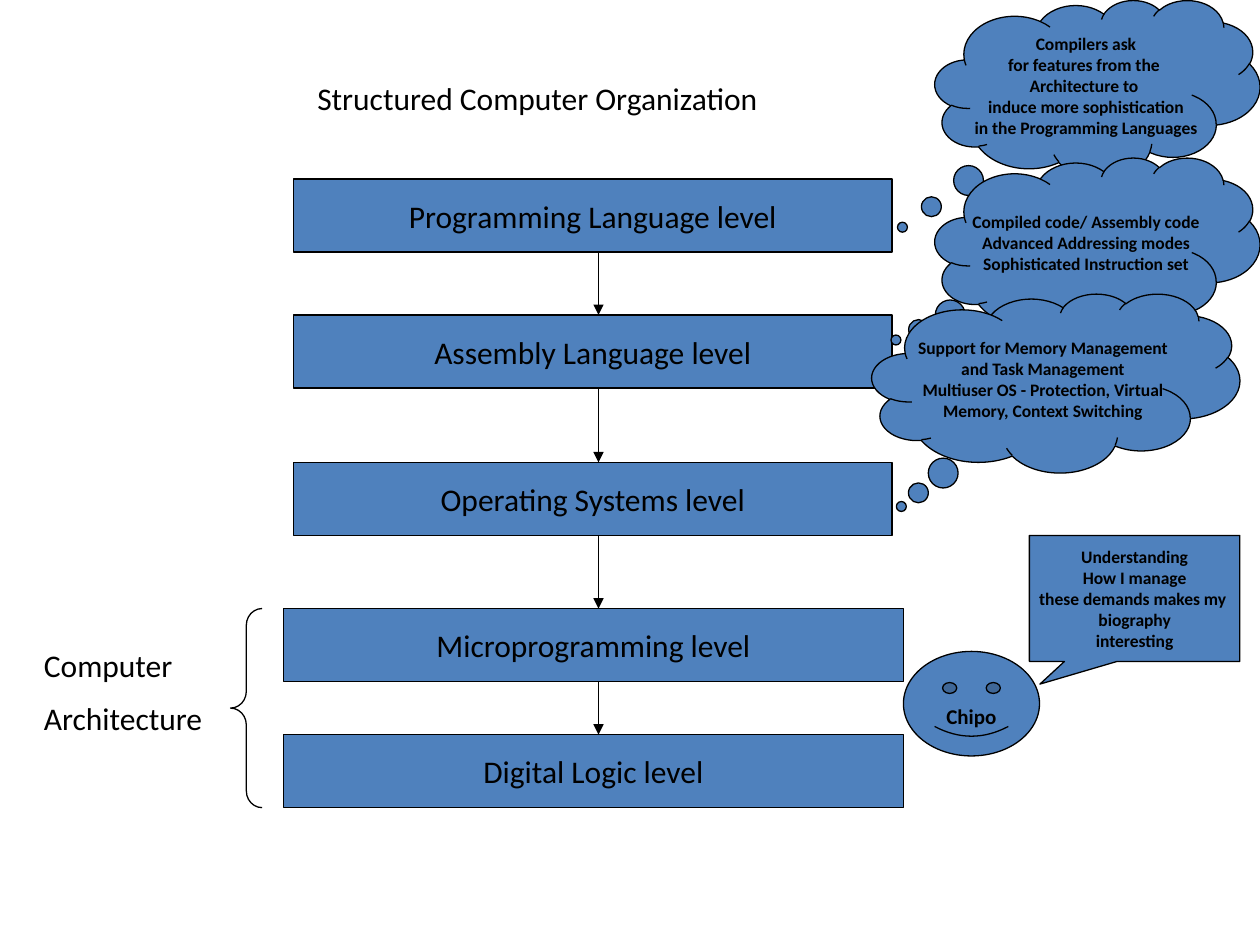
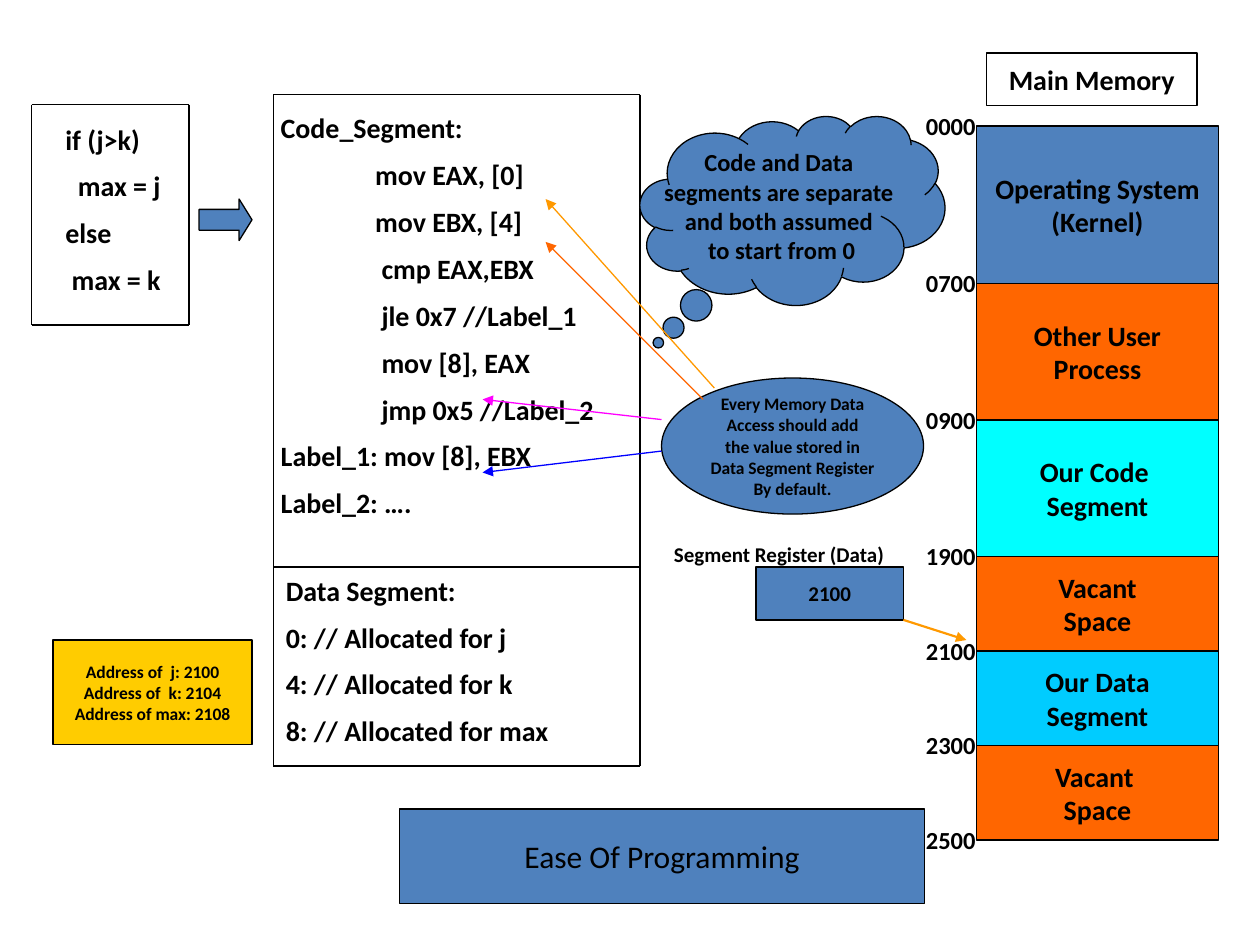
from pptx import Presentation
from pptx.dml.color import RGBColor as Rgb
from pptx.enum.shapes import MSO_CONNECTOR as Conn, MSO_SHAPE as Geo
from pptx.enum.text import MSO_ANCHOR as Anchor, MSO_AUTO_SIZE as Auto, PP_ALIGN as Align
from pptx.oxml.ns import qn
from pptx.util import Inches, Pt
from lxml.etree import SubElement as Sub

HUES = {
    "black": "000000", "blue": "4F81BD", "orange": "FF6600", "cyan": "00FFFF",
    "sky": "00CCFF", "gold": "FFCC00", "amber": "FF9900", "pink": "FF00FF",
    "navy": "0000FF",
}
FONT = "Calibri"


def put(page, geo, at, rows=(), size=16, bold=True, fill="blue", adj=(), dents=()):
    spot = [Inches(n) for n in at]
    if geo is None:
        item = page.shapes.add_textbox(*spot)
    else:
        item = page.shapes.add_shape(geo, *spot)
        item.shadow.inherit = False
        if fill:
            item.fill.solid()
            item.fill.fore_color.rgb = Rgb.from_string(HUES[fill])
        else:
            item.fill.background()
        item.line.color.rgb = Rgb.from_string(HUES["black"])
        item.line.width = Pt(0.75)
        for n, part in enumerate(adj):
            item.adjustments[n] = part
    frame = item.text_frame
    frame.word_wrap = geo is None
    if geo is None:
        frame.auto_size = Auto.SHAPE_TO_FIT_TEXT
    else:
        frame.vertical_anchor = Anchor.MIDDLE
    for n, row in enumerate(rows):
        para = frame.add_paragraph() if n else frame.paragraphs[0]
        para.alignment = Align.LEFT if geo is None else Align.CENTER
        if geo is None and n:
            para.space_before = Pt(size * 0.475)
        if dents:
            para._p.get_or_add_pPr().set("marL", str(Inches(dents[n])))
        run = para.add_run()
        run.text = row
        run.font.name = FONT
        run.font.size = Pt(size)
        run.font.bold = bold
        run.font.color.rgb = Rgb.from_string(HUES["black"])
    return item


def link(page, start, end, hue="black", width=0.75, head=True):
    line = page.shapes.add_connector(Conn.STRAIGHT, *[Inches(n) for n in start + end])
    line.line.color.rgb = Rgb.from_string(HUES[hue])
    line.line.width = Pt(width)
    if head:
        Sub(line.line._get_or_add_ln(), qn("a:tailEnd"), type="triangle")
    Sub(line._element.spPr, qn("a:effectLst"))


deck = Presentation()
deck.slide_width, deck.slide_height = Inches(10), Inches(7.5)
blank = deck.slide_layouts[6]

page = deck.slides.add_slide(blank)
put(page, None, (2.42, 0.58, 6, 0.5), ["Structured Computer Organization"], 18, False)

levels = [
    ("Programming Language level", 2.33, 1.42, 4.75),
    ("Assembly Language level", 2.33, 2.5, 4.75),
    ("Operating Systems level", 2.33, 3.67, 4.75),
    ("Microprogramming level", 2.25, 4.83, 4.92),
    ("Digital Logic level", 2.25, 5.83, 4.92),
]
tall = 0.58
for name, left, top, wide in levels:
    put(page, Geo.RECTANGLE, (left, top, wide, tall), [name], 18, False)
put(page, Geo.LEFT_BRACE, (1.83, 4.83, 0.25, 1.58), fill=None, adj=(0.53, 0.5))
put(page, None, (0.25, 5.08, 1.58, 0.85), ["Computer", "Architecture"], 18, False)
for above, below in zip(levels, levels[1:]):
    link(page, (4.75, above[2] + tall), (4.75, below[2]))

clouds = [
    ((7.42, 0, 2.58, 1.42), (-0.6, 0.77),
     ["Compilers ask", "for features from the ", "Architecture to ",
      "induce more sophistication", "in the Programming Languages"]),
    ((7.42, 1.25, 2.58, 1.42), (-0.62, 0.52),
     ["Compiled code/ Assembly code", "Advanced Addressing modes",
      "Sophisticated Instruction set"]),
    ((6.92, 2.33, 2.92, 1.42), (-0.42, 0.69),
     ["Support for Memory Management", "and Task Management",
      "Multiuser OS - Protection, Virtual", "Memory, Context Switching"]),
]
for at, adj, rows in clouds:
    put(page, Geo.CLOUD_CALLOUT, at, rows, 10, adj=adj)
face = put(page, Geo.SMILEY_FACE, (7.17, 5.17, 1.08, 0.83), ["Chipo"], 12, adj=(0.05,))
face.text_frame.margin_top = Inches(0.25)
put(page, Geo.RECTANGULAR_CALLOUT, (8.17, 4.25, 1.67, 1),
    ["Understanding", "How I manage", "these demands makes my ", "biography",
     "interesting"], 10, adj=(-0.45, 0.68))

page = deck.slides.add_slide(blank)
put(page, None, (0.42, 0.92, 1.25, 1.57),
    ["if (j>k)", "max = j", "else", "max = k"], dents=(0, 0.1, 0, 0.05))
put(page, Geo.RIGHT_ARROW, (1.58, 1.58, 0.42, 0.33), adj=(0.5, 0.31))
put(page, None, (2.08, 0.83, 4.17, 3.98),
    ["Code_Segment:", "mov EAX, [0]", "mov EBX, [4]", "cmp EAX,EBX",
     "jle 0x7 //Label_1", "mov [8], EAX", "jmp 0x5 //Label_2",
     "Label_1: mov [8], EBX", "Label_2: …."],
    dents=[0.05] + [0.8] * 2 + [0.85] * 4 + [0.05] * 2)
put(page, None, (2.17, 4.5, 2.92, 1.57),
    ["Data Segment:", "0: // Allocated for j", "4: // Allocated for k",
     "8: // Allocated for max"])

frames = [(0.25, 0.83, 1.5, 2.58), (2.17, 0.75, 5.08, 4.5), (2.17, 4.5, 5.08, 6.08)]
for left, top, right, base in frames:
    for y in (top, base):
        link(page, (left, y), (right, y), head=False)
    for x in (left, right):
        link(page, (x, top), (x, base), head=False)

put(page, Geo.RECTANGLE, (3.17, 6.42, 4.17, 0.75), ["Ease Of Programming"], 18, False)
put(page, Geo.CLOUD_CALLOUT, (5.08, 0.92, 2.42, 1.5),
    ["Code and Data ", "segments are separate ", "and both assumed ",
     "to start from 0"], 14, adj=(-0.44, 0.7))

put(page, Geo.RECTANGLE, (7.83, 0.42, 1.67, 0.42), ["Main Memory"], fill=None)
blocks = [
    ("0000", 15, "blue", ["Operating System", "(Kernel)"]),
    ("0700", 13, "orange", ["Other User", "Process"]),
    ("0900", 13, "cyan", ["Our Code ", "Segment"]),
    ("1900", 9, "orange", ["Vacant", "Space"]),
    ("2100", 9, "sky", ["Our Data", "Segment"]),
    ("2300", 9, "orange", ["Vacant ", "Space"]),
    ("2500", 0, None, []),
]
top = 1
for mark, units, hue, rows in blocks:
    high = units / 12
    if rows:
        put(page, Geo.RECTANGLE, (7.75, top, 1.92, high), rows, fill=hue)
    put(page, None, (7.25, top - 0.17, 0.67, 0.33), [mark], 14)
    top += high

put(page, Geo.RECTANGLE, (0.42, 5.08, 1.58, 0.83),
    ["Address of  j: 2100", "Address of  k: 2104", "Address of max: 2108"], 10,
    fill="gold")
put(page, Geo.RECTANGLE, (6, 4.5, 1.17, 0.42), ["2100"], 12)
link(page, (7.17, 4.92), (7.67, 5.08), "amber", 1.25)
put(page, None, (5.25, 4.25, 2.08, 0.3), ["Segment Register (Data)"], 12)
put(page, Geo.OVAL, (5.25, 3, 2.08, 1.08),
    ["Every Memory Data", "Access should add", "the value stored in",
     "Data Segment Register", "By default."], 10)
for start, end, hue in [
    ((5.67, 3.08), (4.33, 1.58), "amber"),
    ((5.58, 3.17), (4.33, 1.92), "orange"),
    ((5.25, 3.33), (3.83, 3.17), "pink"),
    ((5.25, 3.58), (3.83, 3.75), "navy"),
]:
    link(page, start, end, hue)

deck.save("out.pptx")
